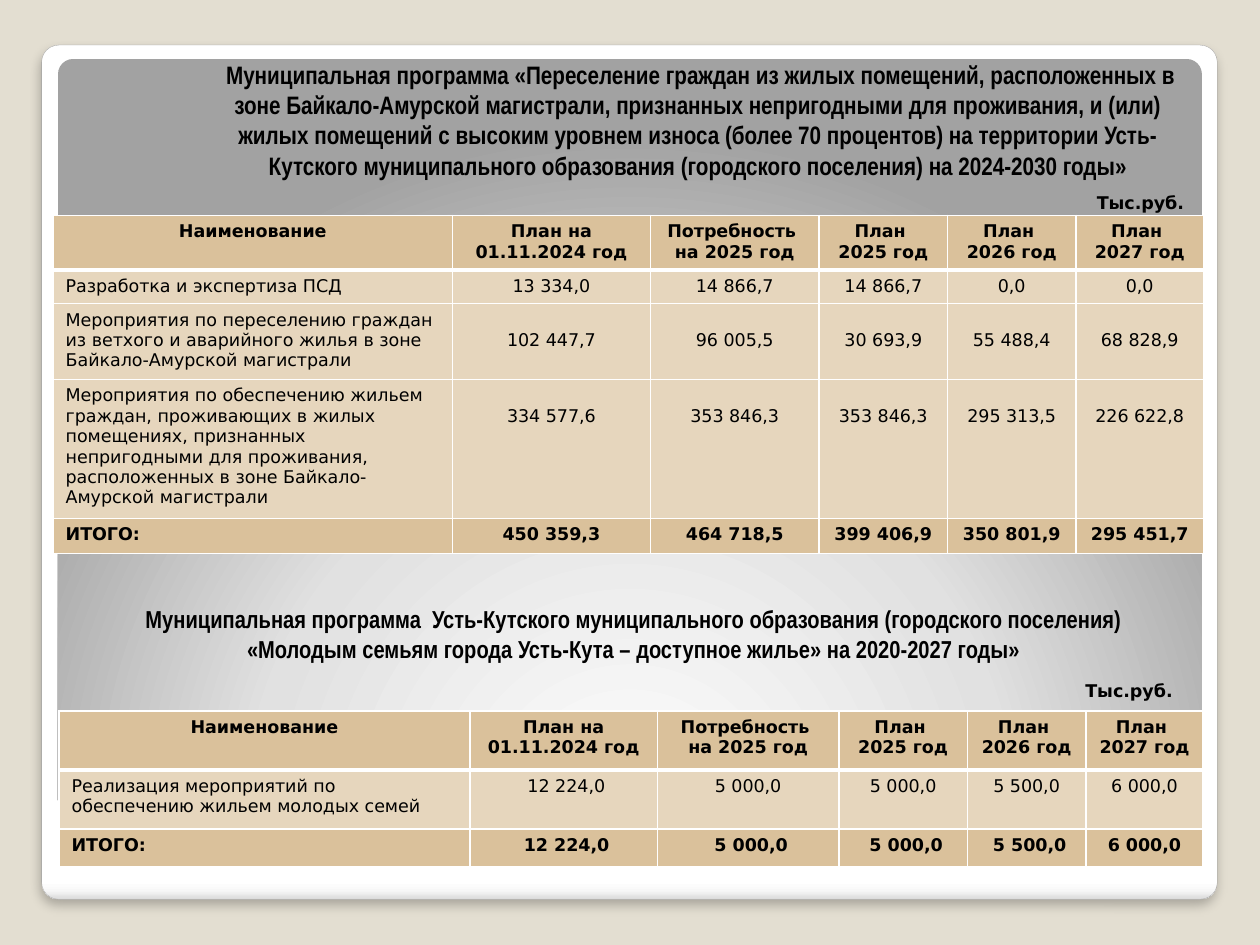
from dataclasses import dataclass

from pptx import Presentation
from pptx.dml.color import RGBColor as RGB
from pptx.enum.shapes import MSO_SHAPE as SHAPE
from pptx.enum.text import MSO_ANCHOR as ANCHOR, PP_ALIGN as ALIGN
from pptx.oxml import parse_xml
from pptx.oxml.ns import nsdecls
from pptx.util import Cm, Pt


@dataclass(frozen=True)
class Theme:
    back: str = "E3DED1"
    edge: str = "A4A4A4"
    text: str = "000000"
    strong: str = "DAC19B"
    light: str = "E6D6BD"
    grid: str = "FFFFFF"
    head_font: str = "Arial Narrow"
    body_font: str = "DejaVu Sans"
    title: float = 14.4
    heading: float = 14
    body: float = 10


th = Theme()


def write(tf, text, size, font, bold=True, align=ALIGN.CENTER):
    """Fill a text frame, one paragraph for each line of text."""
    tf.word_wrap = True
    for i, line in enumerate(text.split("\n")):
        p = tf.paragraphs[0] if i == 0 else tf.add_paragraph()
        p.alignment = align
        r = p.add_run()
        r.text = line
        r.font.size, r.font.name, r.font.bold = Pt(size), font, bold
        r.font.color.rgb = RGB.from_string(th.text)


def add_card(at, stops, direction):
    """Add a rounded card with a gradient fill."""
    sp = s.shapes.add_shape(SHAPE.ROUNDED_RECTANGLE, *map(Cm, at))
    sp.adjustments[0] = 0.02
    sp.shadow.inherit = False
    sp.line.fill.background()
    sp.fill.background()
    no_fill = sp._element.spPr.find("{*}noFill")
    gs = "".join(f'<a:gs pos="{pos * 1000}"><a:srgbClr val="{c}"/></a:gs>' for pos, c in stops)
    no_fill.getparent().replace(no_fill, parse_xml(
        f'<a:gradFill {nsdecls("a")} rotWithShape="1"><a:gsLst>{gs}</a:gsLst>{direction}</a:gradFill>'))
    return sp


prs = Presentation()
prs.slide_width, prs.slide_height = Cm(25.4), Cm(19.05)
s = prs.slides.add_slide(prs.slide_layouts[5])
s.background.fill.solid()
s.background.fill.fore_color.rgb = RGB.from_string(th.back)

# Backdrop: white card with a shadow, grey panel on it
card = add_card((0.84, 0.91, 23.7, 17.22),
                [(0, "FFFFFF"), (98, "FFFFFF"), (99, "F7F7F7"), (100, "DADADA")],
                '<a:lin ang="5400000" scaled="0"/>')
card.line.color.rgb = RGB.from_string(th.edge)
card.line.width = Pt(0.16)
card._element.spPr.find("{*}effectLst").append(parse_xml(
    f'<a:outerShdw {nsdecls("a")} blurRad="{Pt(6)}" dist="{Pt(4)}" dir="5400000" rotWithShape="0">'
    '<a:srgbClr val="000000"><a:alpha val="25000"/></a:srgbClr></a:outerShdw>'))
panel = add_card((1.17, 1.19, 23.06, 15.24), [(0, "FFFFFF"), (55, "E1E1E1"), (100, "A2A2A2")],
                 '<a:path path="circle"><a:fillToRect l="50000" t="175000" r="50000" b="-75000"/></a:path>')

# Title, brought in front of the backdrop
title = s.shapes.title
s.shapes._spTree.append(title._element)
title.left, title.top, title.width, title.height = map(Cm, (3.86, 1.12, 20.42, 2.64))
title.text_frame.vertical_anchor = ANCHOR.BOTTOM
write(title.text_frame,
      " Муниципальная программа «Переселение граждан из жилых помещений, расположенных в зоне "
      "Байкало-Амурской магистрали, признанных непригодными для проживания, и (или) жилых помещений "
      "с высоким уровнем износа (более 70 процентов) на территории Усть-Кутского муниципального "
      "образования (городского поселения) на 2024-2030 годы»", th.title, th.head_font)

# Second heading and the unit notes
for at, anchor, text, size, font in [
    ((2.57, 12.09, 20.42, 1.4), ANCHOR.BOTTOM,
     "Муниципальная программа  Усть-Кутского муниципального образования (городского поселения) "
     "«Молодым семьям города Усть-Кута – доступное жилье» на 2020-2027 годы»",
     th.heading, th.head_font),
    ((21.72, 3.76, 2.54, 0.64), ANCHOR.MIDDLE, "Тыс.руб.", th.body, th.body_font),
    ((21.49, 13.61, 2.54, 0.64), ANCHOR.MIDDLE, "Тыс.руб.", th.body, th.body_font),
]:
    tf = s.shapes.add_textbox(*map(Cm, at)).text_frame
    tf.vertical_anchor = anchor
    write(tf, text, size, font)

# Tables: the header and the total are strong, the rows between are light
header = ["Наименование", "План на 01.11.2024 год", "Потребность \nна 2025 год",
          "План \n2025 год", "План \n2026 год", "План \n2027 год"]
resettlement = [
    header,
    ["Разработка и экспертиза ПСД", "13 334,0", "14 866,7", "14 866,7", "0,0", "0,0"],
    ["Мероприятия по переселению граждан из ветхого и аварийного жилья в зоне "
     "Байкало-Амурской магистрали", "102 447,7", "96 005,5", "30 693,9", "55 488,4", "68 828,9"],
    ["Мероприятия по обеспечению жильем граждан, проживающих в жилых помещениях, признанных "
     "непригодными для проживания, расположенных в зоне Байкало-Амурской магистрали",
     "334 577,6", "353 846,3", "353 846,3", "295 313,5", "226 622,8"],
    ["ИТОГО:", "450 359,3", "464 718,5", "399 406,9", "350 801,9", "295 451,7"],
]
young_families = [
    header,
    ["Реализация мероприятий по обеспечению жильем молодых семей",
     " 12 224,0", "5 000,0", "5 000,0", "5 500,0", "6 000,0"],
    ["ИТОГО:", " 12 224,0", " 5 000,0", " 5 000,0", " 5 500,0", "6 000,0"],
]
second_line = (2, 3)  # rows of the first table whose values start on the second line

for left, top, cols, heights, rows, lowered in [
    (1.07, 4.34, (8.05, 3.99, 3.4, 2.59, 2.59, 2.57), (1.09, 0.66, 1.49, 2.72, 0.71),
     resettlement, second_line),
    (1.19, 14.33, (8.28, 3.78, 3.66, 2.59, 2.39, 2.36), (1.19, 1.19, 0.76), young_families, ()),
]:
    tbl = s.shapes.add_table(len(rows), len(cols), Cm(left), Cm(top),
                             Cm(sum(cols)), Cm(sum(heights))).table
    tbl.horz_banding = False
    for col, width in zip(tbl.columns, cols):
        col.width = Cm(width)
    for i, (row, height) in enumerate(zip(rows, heights)):
        tbl.rows[i].height = Cm(height)
        strong = i in (0, len(rows) - 1)
        for j, text in enumerate(row):
            cell = tbl.cell(i, j)
            cell.fill.solid()
            cell.fill.fore_color.rgb = RGB.from_string(th.strong if strong else th.light)
            if i in lowered and j:
                cell.margin_top = Cm(0.54)
            left_aligned = j == 0 and i > 0
            write(cell.text_frame, text, th.body, th.body_font, strong,
                  ALIGN.LEFT if left_aligned else ALIGN.CENTER)
            # White grid, thicker under the header
            for k, side in enumerate("LRTB"):
                thick = (i, side) in ((0, "B"), (1, "T"))
                cell._tc.tcPr.insert(k, parse_xml(
                    f'<a:ln{side} {nsdecls("a")} w="{Pt(3 if thick else 1)}">'
                    f'<a:solidFill><a:srgbClr val="{th.grid}"/></a:solidFill></a:ln{side}>'))

prs.save("out.pptx")
